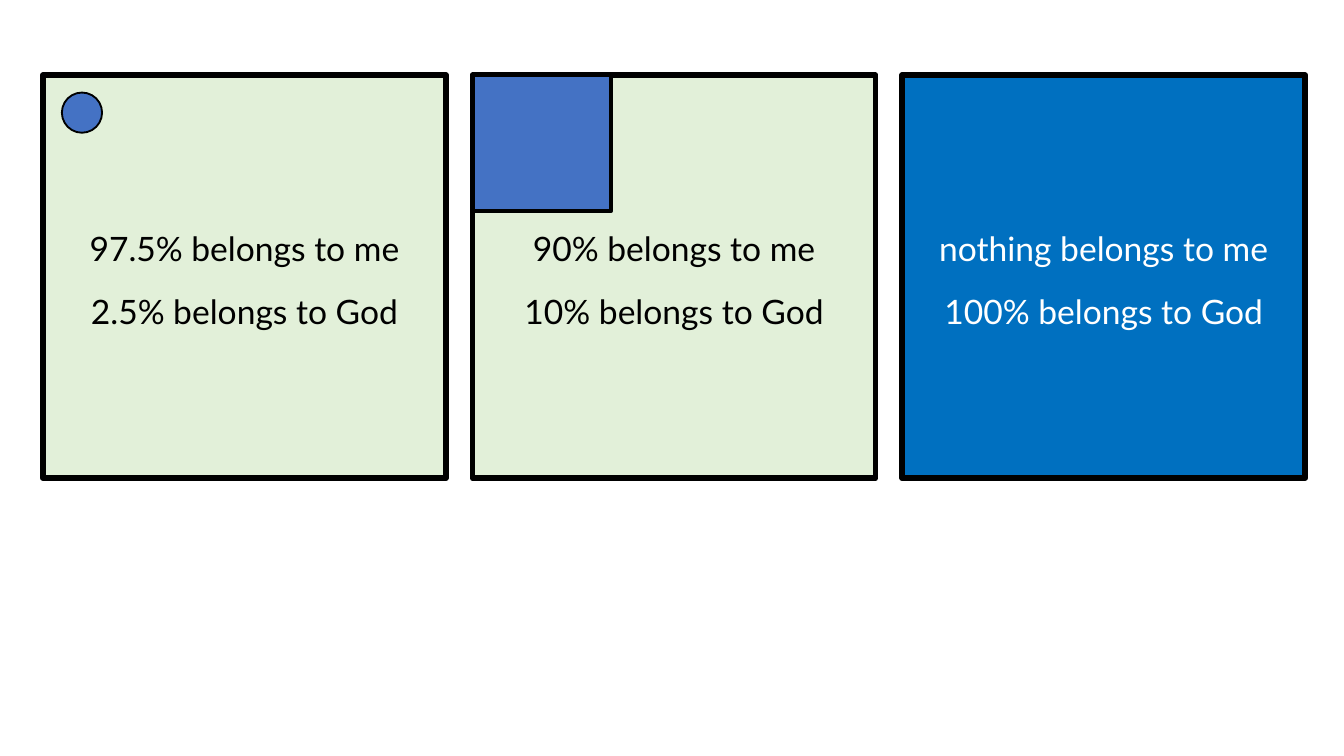
import pptx
import pptx.dml.color
import pptx.enum.shapes
import pptx.enum.text
import pptx.util

Cm = pptx.util.Cm
Pt = pptx.util.Pt
KIND = pptx.enum.shapes.MSO_SHAPE
LEFT, TOP, SIDE, STEP = 0.81, 1.42, 7.62, 8.12
GREEN, BLUE, DEEP = "E2F0D9", "4472C4", "0070C0"
BLACK, WHITE = "000000", "FFFFFF"


def tint(code):
    """Turn a hex string into a colour."""
    return pptx.dml.color.RGBColor.from_string(code)


def shape(slide, kind, x, y, w, h, fill, line):
    """Draw a filled shape with a black outline."""
    item = slide.shapes.add_shape(kind, Cm(x), Cm(y), Cm(w), Cm(h))
    item.shadow.inherit = False
    item.fill.solid()
    item.fill.fore_color.rgb = tint(fill)
    item.line.color.rgb = tint(BLACK)
    item.line.width = Pt(line)


def label(slide, x, y, lines, code):
    """Write centred lines across one square."""
    box = slide.shapes.add_textbox(Cm(x), Cm(y), Cm(SIDE), Cm(2.24))
    frame = box.text_frame
    frame.word_wrap = True
    for i, text in enumerate(lines):
        para = frame.paragraphs[0] if i == 0 else frame.add_paragraph()
        para.alignment = pptx.enum.text.PP_ALIGN.CENTER
        para.space_after = Pt(12)
        run = para.add_run()
        run.text = text
        run.font.name = "Lato"
        run.font.size = Pt(18)
        run.font.color.rgb = tint(code)


def main():
    """Build the slide of three shares and save it."""
    deck = pptx.Presentation()
    deck.slide_width, deck.slide_height = Cm(25.4), Cm(14.29)
    slide = deck.slides.add_slide(deck.slide_layouts[6])
    shares = [
        (GREEN, BLACK, "97.5% belongs to me", "2.5% belongs to God"),
        (GREEN, BLACK, "90% belongs to me", "10% belongs to God"),
        (DEEP, WHITE, "nothing belongs to me", "100% belongs to God"),
    ]
    for i, (fill, ink, *lines) in enumerate(shares):
        x = LEFT + i * STEP
        shape(slide, KIND.RECTANGLE, x, TOP, SIDE, SIDE, fill, 3)
        label(slide, x, TOP + 2.77, lines, ink)
    shape(slide, KIND.OVAL, LEFT + 0.36, TOP + 0.33, 0.76, 0.76, BLUE, 1)
    shape(slide, KIND.RECTANGLE, LEFT + STEP, TOP, 2.62, 2.57, BLUE, 2.25)
    deck.save("out.pptx")


if __name__ == "__main__":
    main()
